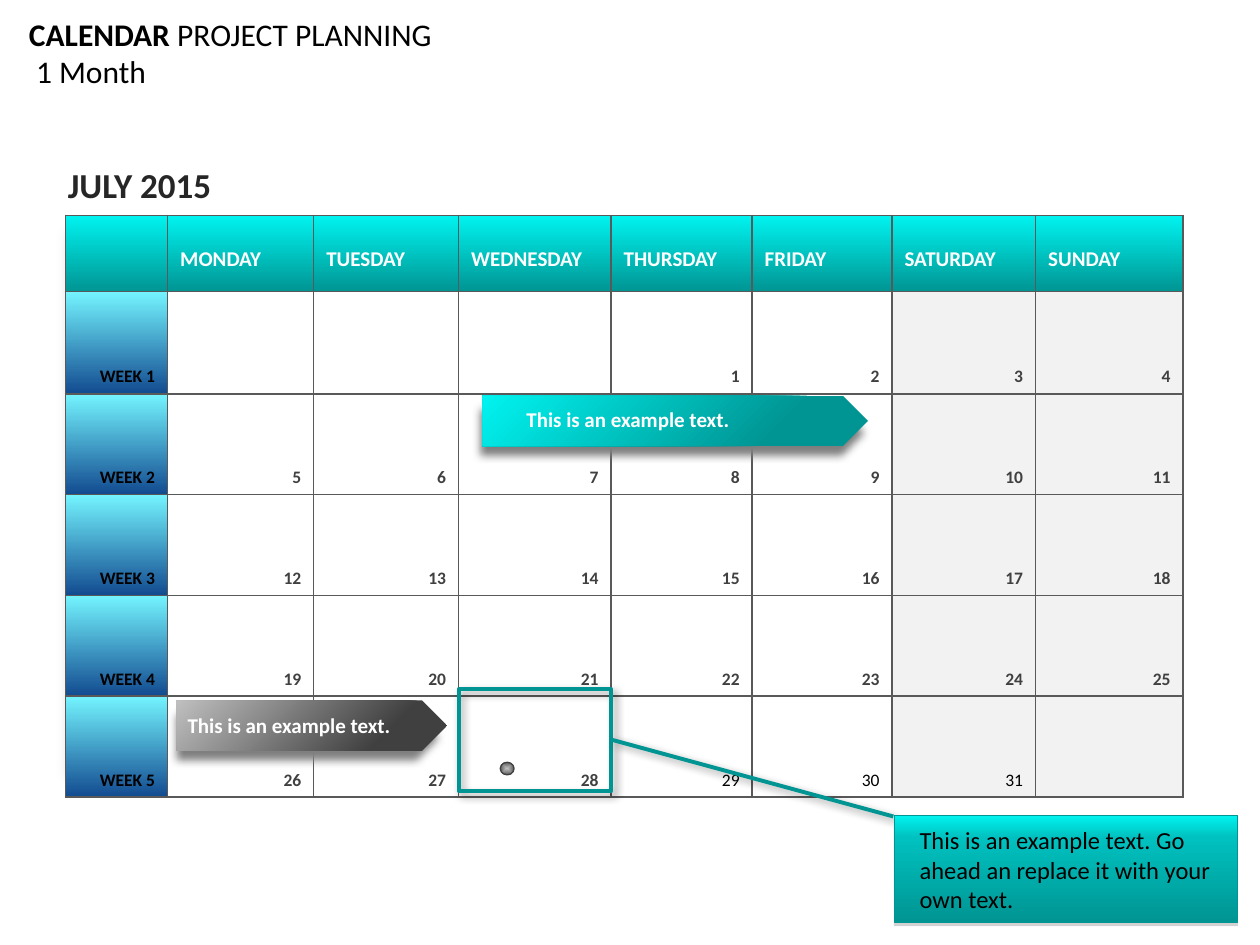
import copy
from dataclasses import dataclass

import pptx
import pptx.dml.color
import pptx.enum.shapes
import pptx.enum.text
import pptx.oxml
import pptx.oxml.ns
import pptx.util

Inches = pptx.util.Inches
Pt = pptx.util.Pt
RGB = pptx.dml.color.RGBColor.from_string
Shape = pptx.enum.shapes.MSO_SHAPE
Align = pptx.enum.text.PP_ALIGN
Anchor = pptx.enum.text.MSO_ANCHOR
NAMESPACE = pptx.oxml.ns.nsdecls("a")


@dataclass(frozen=True)
class Theme:
    font: str = "Calibri"
    black: str = "000000"
    white: str = "FFFFFF"
    ink: str = "262626"
    charcoal: str = "404040"
    border: str = "595959"
    gray: str = "808080"
    silver: str = "BFBFBF"
    weekend: str = "F2F2F2"
    aqua: str = "00F3F0"
    lagoon: str = "00C1BF"
    teal: str = "009593"
    sky: str = "74F4FF"
    navy: str = "124B90"
    month_size: int = 20
    title_size: int = 18
    note_size: int = 14
    label_size: int = 12
    date_size: int = 10


theme = Theme()


def write(frame, text, size, color, bold=False, align=Align.LEFT, new=False):
    para = frame.add_paragraph() if new else frame.paragraphs[-1]
    para.alignment = align
    span = para.add_run()
    span.text = text
    span.font.name = theme.font
    span.font.size = Pt(size)
    span.font.bold = bold
    span.font.color.rgb = RGB(color)


def shade(fill, first, last, angle, start=0):
    fill.gradient()
    fill.gradient_angle = (360 - angle) % 360
    for stop, color, position in zip(fill.gradient_stops, (first, last), (start, 1)):
        stop.color.rgb = RGB(color)
        stop.position = position


deck = pptx.Presentation()
deck.slide_width, deck.slide_height = Inches(10), Inches(7.5)
page = deck.slides.add_slide(deck.slide_layouts[6])
effects = []

backdrop = page.shapes.add_shape(
    Shape.RECTANGLE, Inches(0.41), Inches(1.69), Inches(8.97), Inches(4.65))
backdrop.fill.solid()
backdrop.fill.fore_color.rgb = RGB(theme.silver)
backdrop.line.fill.background()
effects.append((backdrop, '<a:softEdge rad="112500"/>'))

days = ["MONDAY", "TUESDAY", "WEDNESDAY", "THURSDAY", "FRIDAY", "SATURDAY", "SUNDAY"]
widths = [0.81, 1.16, 1.15, 1.21, 1.12, 1.11, 1.14, 1.17]
heights = [0.56, 0.81, 0.8, 0.8, 0.8, 0.8]
first_weekday, last_date = 4, 31
calendar = page.shapes.add_table(
    len(heights), len(widths), Inches(0.52), Inches(1.71),
    Inches(sum(widths)), Inches(sum(heights))).table
calendar.first_row = calendar.horz_banding = False
for column, width in zip(calendar.columns, widths):
    column.width = Inches(width)
for row, height in zip(calendar.rows, heights):
    row.height = Inches(height)

for week in range(len(heights)):
    for day in range(len(widths)):
        cell = calendar.cell(week, day)
        frame = cell.text_frame
        if week == 0:
            shade(cell.fill, theme.aqua, theme.teal, 90)
            cell.margin_top = Inches(0.25)
            if day:
                write(frame, days[day - 1], theme.label_size, theme.white, bold=True)
        else:
            cell.vertical_anchor = Anchor.BOTTOM
            date = (week - 1) * 7 + day - first_weekday + 1
            if day == 0:
                shade(cell.fill, theme.sky, theme.navy, 90)
                write(frame, f"WEEK {week}", theme.date_size, theme.black,
                      bold=True, align=Align.RIGHT)
            else:
                cell.fill.solid()
                cell.fill.fore_color.rgb = RGB(theme.weekend if day > 5 else theme.white)
                if 1 <= date <= last_date:
                    strong = date < 29
                    write(frame, str(date), theme.date_size,
                          theme.charcoal if strong else theme.black,
                          bold=strong, align=Align.RIGHT)
        properties = cell._tc.get_or_add_tcPr()
        for index, side in enumerate("LRTB"):
            properties.insert(index, pptx.oxml.parse_xml(
                f'<a:ln{side} {NAMESPACE} w="12700"><a:solidFill>'
                f'<a:srgbClr val="{theme.border}"/></a:solidFill></a:ln{side}>'))

title = page.shapes.add_textbox(Inches(0.23), Inches(0.19), Inches(4.42), Inches(0.45)).text_frame
title.word_wrap = True
title.vertical_anchor = Anchor.MIDDLE
title.margin_left = title.margin_right = 0
write(title, "CALENDAR", theme.title_size, theme.black, bold=True)
write(title, " PROJECT PLANNING", theme.title_size, theme.black)
write(title, " 1 Month", theme.title_size, theme.black, new=True)

month = page.shapes.add_textbox(Inches(0.44), Inches(1.25), Inches(1.35), Inches(0.44)).text_frame
month.word_wrap = False
write(month, "JULY 2015", theme.month_size, theme.ink, bold=True)

highlight = page.shapes.add_shape(
    Shape.RECTANGLE, Inches(3.64), Inches(5.47), Inches(1.21), Inches(0.81))
highlight.fill.background()
leader = page.shapes.add_connector(
    pptx.enum.shapes.MSO_CONNECTOR.STRAIGHT,
    Inches(4.85), Inches(5.87), Inches(7.09), Inches(6.48))
for outline in (highlight, leader):
    outline.line.color.rgb = RGB(theme.teal)
    outline.line.width = Pt(2.25)
    effects.append((outline, (
        '<a:outerShdw blurRad="63500" dist="38100" dir="2700000">'
        f'<a:srgbClr val="{theme.black}"><a:alpha val="40000"/></a:srgbClr></a:outerShdw>')))

callout = page.shapes.add_shape(
    Shape.RECTANGLE, Inches(7.1), Inches(6.47), Inches(2.72), Inches(0.85))
shade(callout.fill, theme.aqua, theme.teal, 90)
stops = callout._element.spPr.find(".//" + pptx.oxml.ns.qn("a:gsLst"))
stops.insert(1, copy.deepcopy(stops[0]))
middle = callout.fill.gradient_stops[1]
middle.position = 0.21
middle.color.rgb = RGB(theme.lagoon)
callout.line.color.rgb = RGB(theme.teal)
callout.line.width = Pt(0.75)
effects.append((callout, (
    '<a:outerShdw blurRad="0" dist="22860" dir="5400000">'
    f'<a:srgbClr val="{theme.gray}"><a:alpha val="35000"/></a:srgbClr></a:outerShdw>')))
note = page.shapes.add_textbox(Inches(7.2), Inches(6.5), Inches(2.56), Inches(0.81)).text_frame
note.word_wrap = True
write(note, "This is an example text. Go ahead an replace it with your own text.",
      theme.note_size, theme.black)

dot = page.shapes.add_shape(Shape.OVAL, Inches(3.97), Inches(6.05), Inches(0.11), Inches(0.1))
center = 4.03
half = [(0.01, 5.65), (0.05, 5.67), (0.07, 5.68), (0.08, 5.7), (0.07, 5.74),
        (0.05, 5.82), (0.04, 5.92), (0.02, 6.01)]
points = [(center + x, y) for x, y in half] + [(center - x, y) for x, y in reversed(half)]
builder = page.shapes.build_freeform(*points[0], scale=Inches(1))
builder.add_line_segments(points[1:], close=True)
stroke = builder.convert_to_shape()
for mark in (dot, stroke):
    shade(mark.fill, theme.silver, theme.border, 0)
    linear = mark._element.spPr.find(".//" + pptx.oxml.ns.qn("a:lin"))
    linear.getparent().replace(linear, pptx.oxml.parse_xml(
        f'<a:path {NAMESPACE} path="shape">'
        '<a:fillToRect l="50000" t="50000" r="50000" b="50000"/></a:path>'))
    mark.line.color.rgb = RGB(theme.charcoal)
    mark.line.width = Pt(0.75)
    effects.append((mark, ""))

banners = [
    ((3.75, 3.19, 3.23, 0.49), (3.83, 3.14, 3.06, 0.4), (4.08, 3.18, 2.47, 0.3),
     theme.teal, theme.aqua),
    ((1.34, 5.61, 2.27, 0.49), (1.4, 5.56, 2.15, 0.4), (1.39, 5.61, 2.14, 0.3),
     theme.charcoal, theme.silver),
]
for shadow_area, arrow_area, label_area, dark, light in banners:
    shadow = page.shapes.add_shape(Shape.PENTAGON, *map(Inches, shadow_area))
    shadow.fill.solid()
    shadow.fill.fore_color.rgb = RGB(theme.gray)
    effects.append((shadow, '<a:softEdge rad="63500"/>'))
    arrow = page.shapes.add_shape(Shape.PENTAGON, *map(Inches, arrow_area))
    shade(arrow.fill, dark, light, 225, start=0.24)
    effects.append((arrow, ""))
    for part in (shadow, arrow):
        part.line.fill.background()
    label = page.shapes.add_textbox(*map(Inches, label_area)).text_frame
    label.word_wrap = True
    write(label, "This is an example text.", theme.label_size, theme.white, bold=True)

for shape, effect in effects:
    shape._element.spPr.append(pptx.oxml.parse_xml(
        f"<a:effectLst {NAMESPACE}>{effect}</a:effectLst>"))

deck.save("out.pptx")
